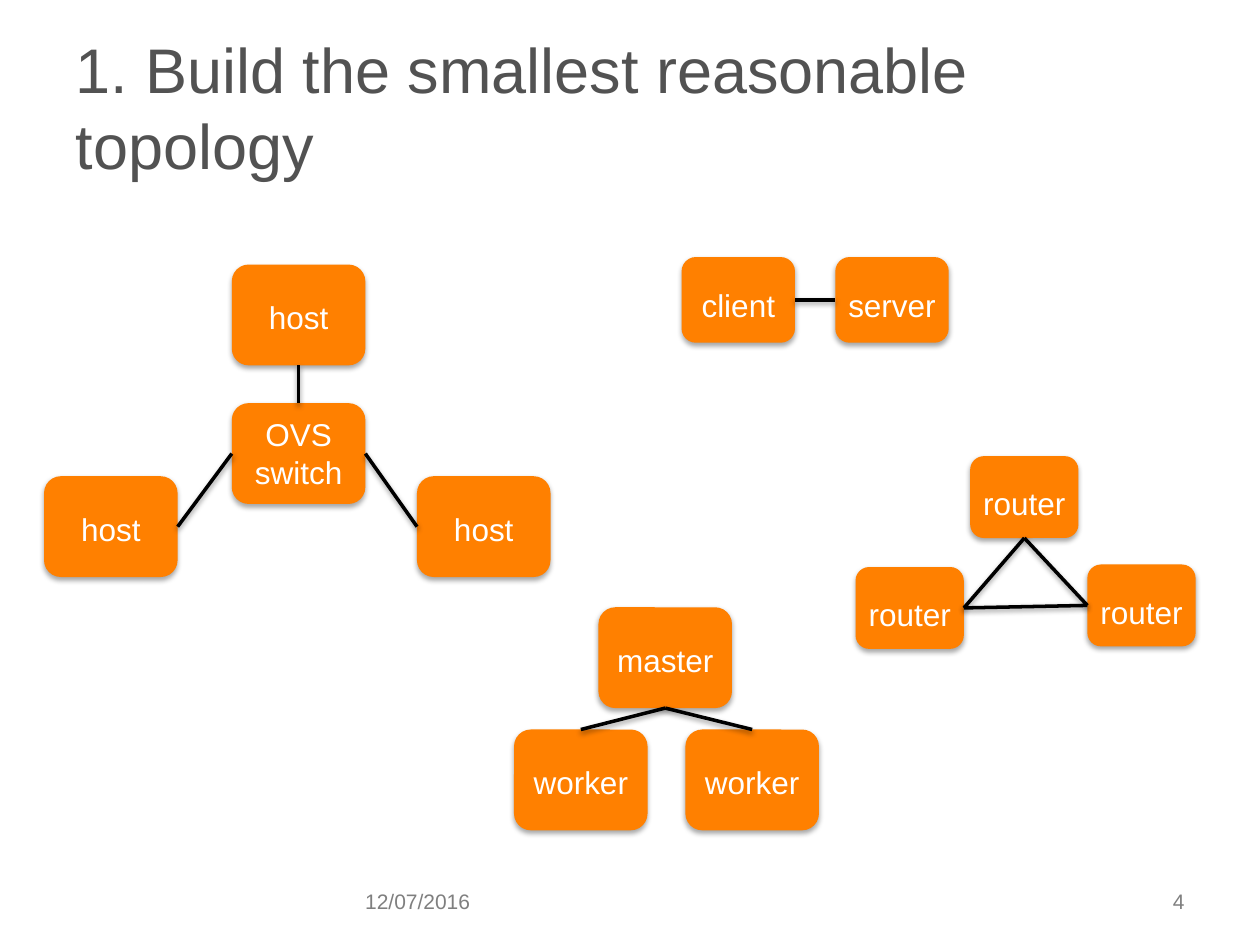
from dataclasses import dataclass

from lxml import etree
from pptx import Presentation
from pptx import util as u
from pptx.dml.color import RGBColor
from pptx.enum import shapes, text
from pptx.oxml import ns

TOP, LEFT, BOTTOM, RIGHT = range(4)  # connection sites of a rounded rectangle
TITLE_ONLY = 5


@dataclass(frozen=True)
class Theme:
    font: str = "Arial"
    title: str = "525252"
    footer: str = "7F7F7F"
    node: str = "FF8000"
    label: str = "FFFFFF"
    link: str = "000000"
    shadow: str = "000000"
    title_size: int = 36
    label_size: int = 18
    footer_size: int = 12
    link_width: int = 2


def grid(units):
    """Turn grid units into a length: the slide is 100 columns by 75 rows."""
    return u.Inches(units / 10)


class TopologySlide:
    def __init__(self, deck, theme):
        self.theme = theme
        self.slide = deck.slides.add_slide(deck.slide_layouts[TITLE_ONLY])

    def style(self, paragraph, size, color, align=text.PP_ALIGN.LEFT):
        paragraph.alignment = align
        paragraph.font.name = self.theme.font
        paragraph.font.size = u.Pt(size)
        paragraph.font.color.rgb = RGBColor.from_string(color)

    def drop_shadow(self, shape, opacity, distance):
        """Cast a soft shadow straight down."""
        effects = etree.SubElement(shape._element.spPr, ns.qn("a:effectLst"))
        shadow = etree.SubElement(
            effects, ns.qn("a:outerShdw"), blurRad=str(u.Pt(3.1)),
            dist=str(u.Pt(distance)), dir="5400000", rotWithShape="0")
        color = etree.SubElement(shadow, ns.qn("a:srgbClr"), val=self.theme.shadow)
        etree.SubElement(color, ns.qn("a:alpha"), val=str(opacity * 1000))

    def title(self, words, *area):
        box = self.slide.shapes.title
        box.left, box.top, box.width, box.height = map(grid, area)
        frame = box.text_frame
        frame.text = words
        frame.auto_size = text.MSO_AUTO_SIZE.NONE
        frame.vertical_anchor = text.MSO_ANCHOR.MIDDLE
        self.style(frame.paragraphs[0], self.theme.title_size, self.theme.title)

    def footer(self, words, *area, align=text.PP_ALIGN.LEFT):
        frame = self.slide.shapes.add_textbox(*map(grid, area)).text_frame
        frame.word_wrap = True
        frame.vertical_anchor = text.MSO_ANCHOR.MIDDLE
        frame.text = words
        self.style(frame.paragraphs[0], self.theme.footer_size,
                   self.theme.footer, align)

    def node(self, group, words, column, row, width, height):
        box = group.shapes.add_shape(
            shapes.MSO_SHAPE.ROUNDED_RECTANGLE,
            *map(grid, (column, row, width, height)))
        box.fill.solid()
        box.fill.fore_color.rgb = RGBColor.from_string(self.theme.node)
        box.line.fill.background()
        self.drop_shadow(box, opacity=35, distance=1.8)
        self.label(group, words, column, row, width, height)
        return box

    def label(self, group, words, column, row, width, height):
        """Centre a label over a node, with its height set by its lines."""
        lines = words.count("\n") + 1
        label_height = height * (0.04 + 0.42 * lines)
        top = row + (height - label_height) / 2
        box = group.shapes.add_textbox(*map(grid, (column, top, width, label_height)))
        frame = box.text_frame
        frame.word_wrap = True
        frame.auto_size = text.MSO_AUTO_SIZE.SHAPE_TO_FIT_TEXT
        frame.margin_left = frame.margin_right = 0
        frame.text = words
        for paragraph in frame.paragraphs:
            self.style(paragraph, self.theme.label_size, self.theme.label,
                       text.PP_ALIGN.CENTER)

    def link(self, group, start, start_site, end, end_site):
        line = group.shapes.add_connector(shapes.MSO_CONNECTOR.STRAIGHT, 0, 0, 0, 0)
        line.begin_connect(start, start_site)
        line.end_connect(end, end_site)
        line.line.color.rgb = RGBColor.from_string(self.theme.link)
        line.line.width = u.Pt(self.theme.link_width)
        self.drop_shadow(line, opacity=38, distance=1.6)

    def topology(self, size, nodes, links):
        """Group same-sized nodes, given by name, with the links between them."""
        group = self.slide.shapes.add_group_shape()
        boxes = {name: self.node(group, words, column, row, *size)
                 for name, (words, column, row) in nodes.items()}
        for start, start_site, end, end_site in links:
            self.link(group, boxes[start], start_site, boxes[end], end_site)
        # Fit the group to its nodes, now that the links are in place.
        group.left = min(box.left for box in boxes.values())
        group.top = min(box.top for box in boxes.values())
        group.width = max(box.left + box.width for box in boxes.values()) - group.left
        group.height = max(box.top + box.height for box in boxes.values()) - group.top
        frame = group._element.grpSpPr.find(ns.qn("a:xfrm"))
        origin, extent = frame.find(ns.qn("a:chOff")), frame.find(ns.qn("a:chExt"))
        origin.set("x", str(group.left))
        origin.set("y", str(group.top))
        extent.set("cx", str(group.width))
        extent.set("cy", str(group.height))


def main():
    deck = Presentation()
    deck.slide_width, deck.slide_height = grid(100), grid(75)
    page = TopologySlide(deck, Theme())
    page.title("1. Build the smallest reasonable topology", 5, 3, 90, 10.9)
    page.footer("12/07/2016", 28, 69.5, 11, 4)
    page.footer("4", 85.4, 69.5, 9.6, 4, align=text.PP_ALIGN.RIGHT)

    page.topology(
        (9, 6.8),
        {"client": ("client", 54.1, 20.4), "server": ("server", 66.3, 20.4)},
        [("client", RIGHT, "server", LEFT)])
    page.topology(
        (8.6, 6.5),
        {"top": ("router", 77, 36.2), "left": ("router", 67.9, 45),
         "right": ("router", 86.3, 44.8)},
        [("left", RIGHT, "top", BOTTOM), ("right", LEFT, "top", BOTTOM),
         ("left", RIGHT, "right", LEFT)])
    large = (10.6, 8)
    page.topology(
        large,
        {"left": ("host", 3.5, 37.8), "switch": ("OVS\nswitch", 18.4, 32),
         "right": ("host", 33.1, 37.8), "top": ("host", 18.4, 21)},
        [("left", RIGHT, "switch", LEFT), ("right", LEFT, "switch", RIGHT),
         ("top", BOTTOM, "switch", TOP)])
    page.topology(
        large,
        {"left": ("worker", 40.8, 57.9), "master": ("master", 47.5, 48.2),
         "right": ("worker", 54.4, 57.9)},
        [("left", TOP, "master", BOTTOM), ("right", TOP, "master", BOTTOM)])
    deck.save("out.pptx")


if __name__ == "__main__":
    main()
